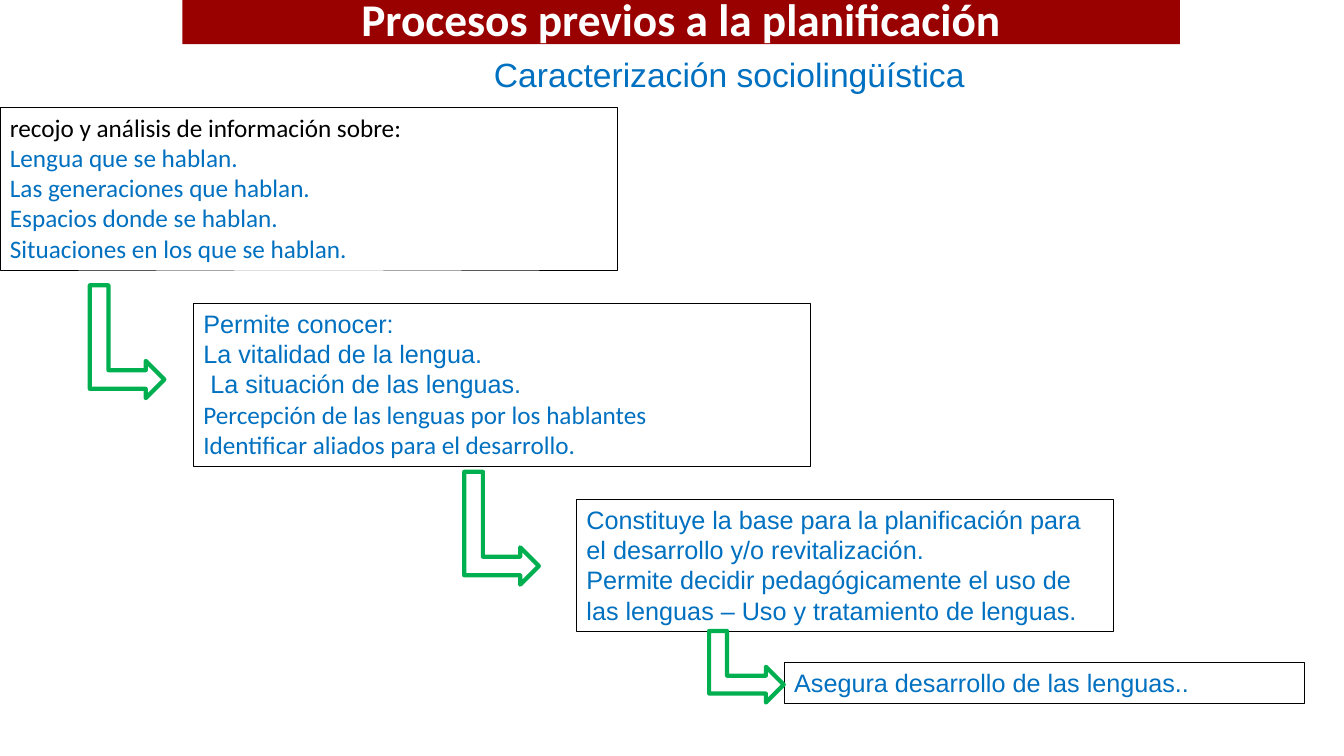
from pptx import Presentation
from pptx.dml.color import RGBColor
from pptx.enum.shapes import MSO_SHAPE
from pptx.enum.text import MSO_ANCHOR, PP_ALIGN
from pptx.util import Pt

RECTANGLE = MSO_SHAPE.RECTANGLE
BENT_ARROW = MSO_SHAPE.BENT_UP_ARROW
MIDDLE, TOP = MSO_ANCHOR.MIDDLE, MSO_ANCHOR.TOP
CENTER, LEFT = PP_ALIGN.CENTER, PP_ALIGN.LEFT

WHITE, BLACK, RED, BLUE, GREEN = "FFFFFF", "000000", "990000", "0070C0", "00B050"
SANS, HUMANIST = "Arial", "Calibri"

STEPS = [
    ((0, 76.4, 440.8, 116.4), [
        ("recojo y análisis de información sobre:", HUMANIST, BLACK),
        ("Lengua que se hablan.", HUMANIST, BLUE),
        ("Las generaciones que hablan.", HUMANIST, BLUE),
        ("Espacios donde se hablan.", HUMANIST, BLUE),
        ("Situaciones en los que se hablan.", HUMANIST, BLUE),
    ]),
    ((138.2, 216.6, 440.8, 116.4), [
        ("Permite conocer:", SANS, BLUE),
        ("La vitalidad de la lengua.", SANS, BLUE),
        (" La situación de las lenguas.", SANS, BLUE),
        ("Percepción de las lenguas por los hablantes", HUMANIST, BLUE),
        ("Identificar aliados para el desarrollo.", HUMANIST, BLUE),
    ]),
    ((411.8, 356.6, 383.6, 94.5), [
        ("Constituye la base para la planificación para el desarrollo y/o revitalización.",
         SANS, BLUE),
        ("Permite decidir pedagógicamente el uso de las lenguas – Uso y tratamiento de lenguas.",
         SANS, BLUE),
    ]),
    ((560.2, 473, 371.5, 29), [
        ("Asegura desarrollo de las lenguas..", SANS, BLUE),
    ]),
]
ARROWS = [(64.1, 203.8, 53.3, 80.6), (331.6, 337, 53.3, 80.6), (506.5, 450.7, 53.3, 51.1)]


def color(value):
    """Turn a hex string into a colour."""
    return RGBColor.from_string(value)


def add_box(page, box, kind=RECTANGLE, fill=None, line=None, weight=0.25):
    """Draw a preset shape with an optional fill and outline."""
    shape = page.shapes.add_shape(kind, *map(Pt, box))
    shape.shadow.inherit = False
    if fill:
        shape.fill.solid()
        shape.fill.fore_color.rgb = color(fill)
    else:
        shape.fill.background()
    if line:
        shape.line.color.rgb = color(line)
        shape.line.width = Pt(weight)
    else:
        shape.line.fill.background()
    return shape


def write(para, text, font=SANS, size=18, ink=BLUE, bold=False, align=LEFT, spacing=1.0):
    """Fill one paragraph with formatted text."""
    para.alignment = align
    para.line_spacing = spacing
    span = para.add_run()
    span.text = text
    span.font.name = font
    span.font.size = Pt(size)
    span.font.bold = bold
    span.font.color.rgb = color(ink)


def add_title(page, box):
    """Place the title band."""
    frame = add_box(page, box, fill=RED).text_frame
    frame.word_wrap = True
    frame.vertical_anchor = MIDDLE
    write(frame.paragraphs[0], "Procesos previos a la planificación", font=HUMANIST,
          size=32.4, ink=WHITE, bold=True, align=CENTER, spacing=0.9)


def add_subtitle(page, box):
    """Place the centred subtitle."""
    frame = page.shapes.add_textbox(*map(Pt, box)).text_frame
    frame.word_wrap = True
    write(frame.paragraphs[0], "Caracterización sociolingüística", size=24, align=CENTER)


def add_step(page, box, lines):
    """Place an outlined step with one paragraph per line."""
    frame = add_box(page, box, line=BLACK).text_frame
    frame.word_wrap = True
    frame.vertical_anchor = TOP
    for index, (text, font, ink) in enumerate(lines):
        para = frame.add_paragraph() if index else frame.paragraphs[0]
        write(para, text, font=font, ink=ink)


def add_arrow(page, box):
    """Place an arrow that runs down and then right inside the box."""
    left, top, width, height = box
    shift = (height - width) / 2
    turned = (left - shift, top + shift, height, width)
    arrow = add_box(page, turned, kind=BENT_ARROW, line=GREEN, weight=3)
    arrow.rotation = 90


def main():
    """Build the slide and save the deck."""
    deck = Presentation()
    deck.slide_width, deck.slide_height = Pt(960), Pt(540)
    page = deck.slides.add_slide(deck.slide_layouts[6])
    add_title(page, (130.2, 0, 712.6, 31.6))
    add_subtitle(page, (298.8, 34.6, 444.2, 36.3))
    for box, lines in STEPS:
        add_step(page, box, lines)
    for box in ARROWS:
        add_arrow(page, box)
    deck.save("out.pptx")


if __name__ == "__main__":
    main()
